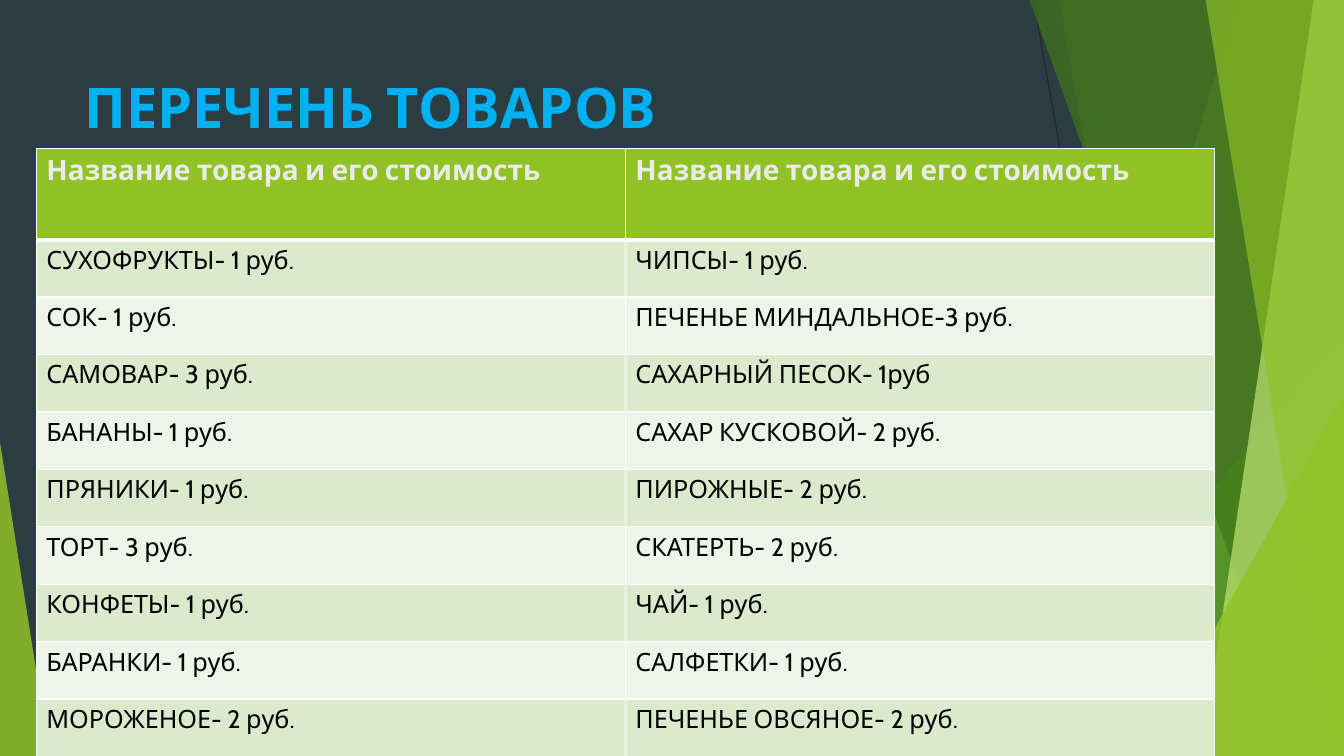
import pptx
import pptx.dml.color
import pptx.enum.shapes
import pptx.enum.text
import pptx.oxml.ns
import pptx.util
from lxml import etree

GREEN = "90C226"
HEADING = "Название товара и его стоимость"
GOODS = [
    ("СУХОФРУКТЫ- 1 руб.", "ЧИПСЫ- 1 руб."),
    ("СОК- 1 руб.", "ПЕЧЕНЬЕ МИНДАЛЬНОЕ-3 руб."),
    ("САМОВАР- 3 руб.", "САХАРНЫЙ ПЕСОК- 1руб"),
    ("БАНАНЫ- 1 руб.", "САХАР КУСКОВОЙ- 2 руб."),
    ("ПРЯНИКИ- 1 руб.", "ПИРОЖНЫЕ- 2 руб."),
    ("ТОРТ- 3 руб.", "СКАТЕРТЬ- 2 руб."),
    ("КОНФЕТЫ- 1 руб.", "ЧАЙ- 1 руб."),
    ("БАРАНКИ- 1 руб.", "САЛФЕТКИ- 1 руб."),
    ("МОРОЖЕНОЕ- 2 руб.", "ПЕЧЕНЬЕ ОВСЯНОЕ- 2 руб."),
]


def rgb(hex_color):
    return pptx.dml.color.RGBColor.from_string(hex_color)


def add_child(parent, tag, **attributes):
    return etree.SubElement(parent, pptx.oxml.ns.qn(tag), **attributes)


class PriceListSlide:
    """Places elements on one slide; lengths are percentages of its width and height."""

    font = "Cabin"

    def __init__(self, presentation, background):
        self.width = presentation.slide_width
        self.height = presentation.slide_height
        self.slide = presentation.slides.add_slide(presentation.slide_layouts[5])
        self.shapes = self.slide.shapes
        self.slide.background.fill.solid()
        self.slide.background.fill.fore_color.rgb = rgb(background)

    def x(self, share):
        return round(self.width * share / 100)

    def y(self, share):
        return round(self.height * share / 100)

    def box(self, left, top, width, height):
        return self.x(left), self.y(top), self.x(width), self.y(height)

    def add_words(self, frame, words, size, color, bold=False):
        run = frame.paragraphs[0].add_run()
        run.text = words
        run.font.name = self.font
        run.font.size = pptx.util.Pt(size)
        run.font.bold = bold
        run.font.color.rgb = rgb(color)

    def paint(self, facet, color, opacity):
        facet.shadow.inherit = False
        facet.line.fill.background()
        facet.fill.solid()
        facet.fill.fore_color.rgb = rgb(color)
        tint = facet._element.spPr.find(".//" + pptx.oxml.ns.qn("a:srgbClr"))
        add_child(tint, "a:alpha", val=str(opacity * 1000))

    def hairline(self, x1, y1, x2, y2):
        line = self.shapes.add_connector(
            pptx.enum.shapes.MSO_CONNECTOR.STRAIGHT,
            self.x(x1), self.y(y1), self.x(x2), self.y(y2))
        line.line.color.rgb = rgb("262626")
        line.line.width = pptx.util.Pt(0.75)
        add_child(line._element.spPr, "a:effectLst")

    def band(self, top_left, bottom_left, color, opacity):
        """Full-height facet with a slanted left side, reaching the right edge."""
        builder = self.shapes.build_freeform(self.x(top_left), 0)
        corners = [(100, 0), (100, 100), (bottom_left, 100)]
        builder.add_line_segments([(self.x(x), self.y(y)) for x, y in corners])
        self.paint(builder.convert_to_shape(), color, opacity)

    def triangle(self, left, top, width, apex, color, opacity):
        """Triangle standing on the bottom edge; apex is 0 for left, 1 for right."""
        facet = self.shapes.add_shape(
            pptx.enum.shapes.MSO_SHAPE.ISOSCELES_TRIANGLE,
            *self.box(left, top, width, 100 - top))
        facet.adjustments[0] = apex
        self.paint(facet, color, opacity)

    def title(self, words, *place):
        heading = self.shapes.title
        heading.left, heading.top, heading.width, heading.height = self.box(*place)
        frame = heading.text_frame
        frame.word_wrap = True
        frame.vertical_anchor = pptx.enum.text.MSO_ANCHOR.TOP
        frame.paragraphs[0].alignment = pptx.enum.text.PP_ALIGN.LEFT
        self.add_words(frame, words, 40, "00B0F0", bold=True)

    def borders(self, cell, top, bottom):
        properties = cell._tc.get_or_add_tcPr()
        widths = {"L": 1, "R": 1, "T": top, "B": bottom}
        for place, (side, width) in enumerate(widths.items()):
            edge = add_child(properties, "a:ln" + side, w=str(pptx.util.Pt(width)))
            add_child(add_child(edge, "a:solidFill"), "a:srgbClr", val="FFFFFF")
            properties.insert(place, edge)

    def table(self, rows, left, top, width, header_height, row_height):
        height = header_height + row_height * (len(rows) - 1)
        table = self.shapes.add_table(
            len(rows), len(rows[0]), *self.box(left, top, width, height)).table
        for number, goods in enumerate(rows):
            header = number == 0
            table.rows[number].height = self.y(header_height if header else row_height)
            stripe = GREEN if header else ("EEF4E8", "DBE9CD")[number % 2]
            for column, words in enumerate(goods):
                cell = table.cell(number, column)
                cell.fill.solid()
                cell.fill.fore_color.rgb = rgb(stripe)
                self.borders(cell, 3 if number == 1 else 1, 3 if header else 1)
                self.add_words(cell.text_frame, words, 20 if header else 18,
                               "EBEBEB" if header else "000000", bold=header)


def main():
    presentation = pptx.Presentation()
    presentation.slide_width = pptx.util.Inches(13.33)
    presentation.slide_height = pptx.util.Inches(7.5)
    page = PriceListSlide(presentation, "2C3C43")

    page.hairline(76.9, 0, 86.9, 100)
    page.hairline(100, 53.7, 60.9, 100)
    page.band(92.1, 75.3, GREEN, 30)
    page.band(78.8, 88.75, GREEN, 20)
    page.triangle(73.3, 44.4, 26.7, 1, "54A021", 72)
    page.band(76.6, 96.85, "3F7819", 70)
    page.band(97.75, 89.4, "C0E474", 70)
    page.band(89.7, 98.9, GREEN, 65)
    page.triangle(85.1, 52.4, 14.9, 1, GREEN, 80)
    page.triangle(0, 58.5, 3.7, 0, GREEN, 85)

    page.title("ПЕРЕЧЕНЬ ТОВАРОВ", 5.55, 8.9, 70.5, 19.2)
    page.table([(HEADING, HEADING)] + GOODS, 2.7, 19.6, 87.65, 12.1, 7.6)

    presentation.save("out.pptx")


if __name__ == "__main__":
    main()
